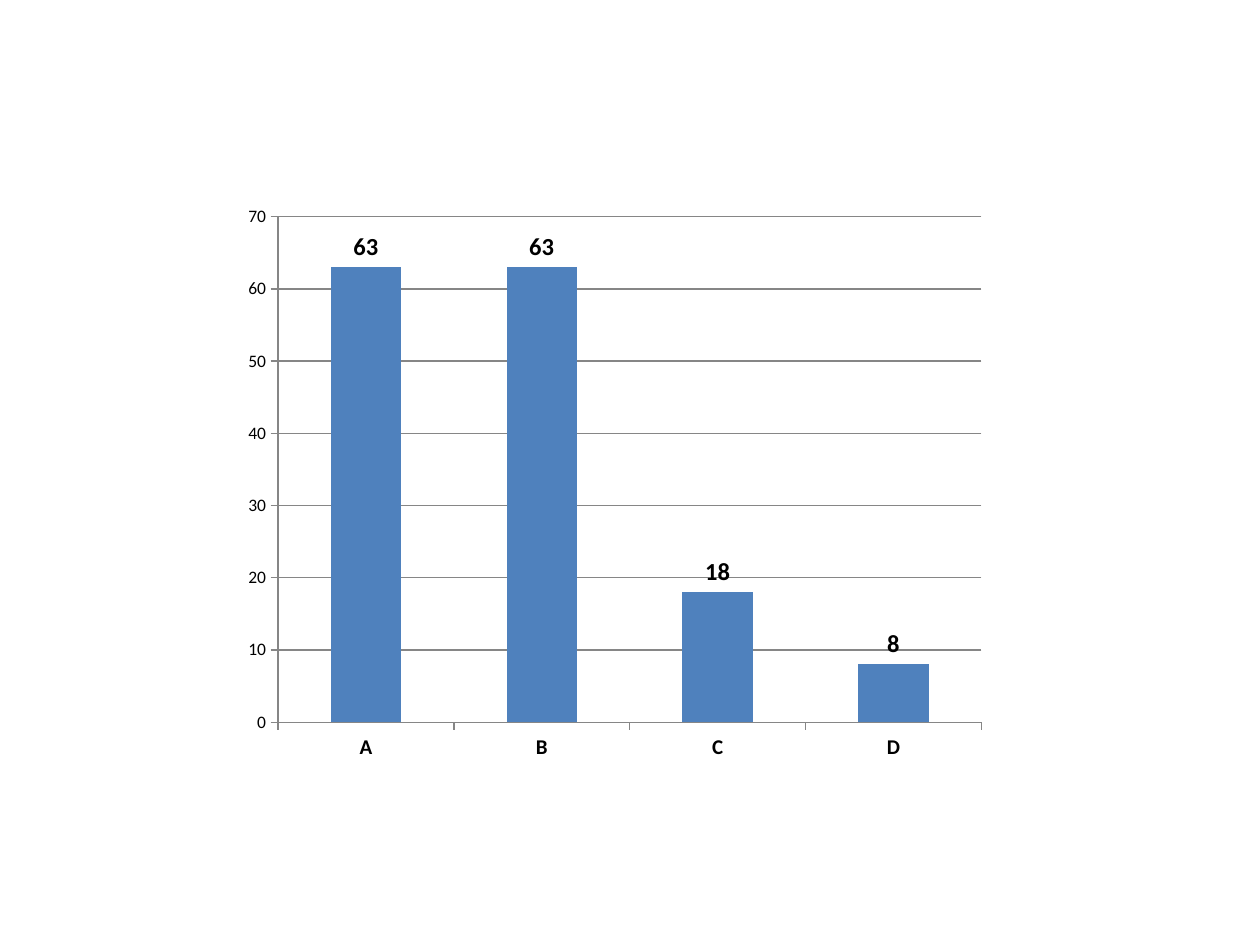
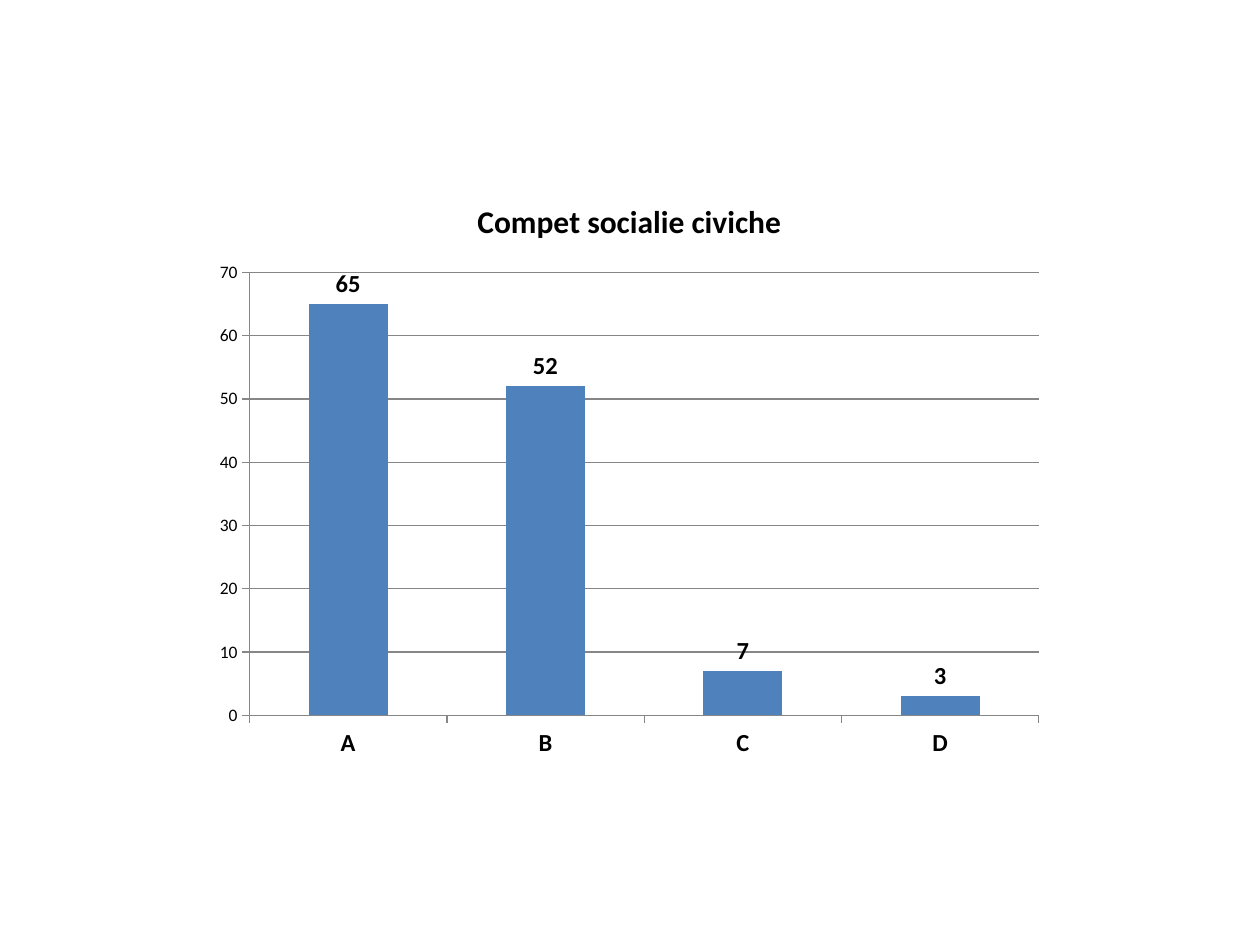
import pptx
import pptx.chart.data
import pptx.dml.color
import pptx.enum.chart
import pptx.util
from pptx.util import Inches

BLACK = pptx.dml.color.RGBColor(0x00, 0x00, 0x00)
BAR_BLUE = pptx.dml.color.RGBColor(0x4F, 0x81, 0xBD)
LINE_GREY = pptx.dml.color.RGBColor(0x86, 0x86, 0x86)
FONT_NAME = "Calibri"
LEVELS = ("A", "B", "C", "D")
BLANK_LAYOUT = 6


def style_font(font, size, bold=False):
    font.name = FONT_NAME
    font.size = pptx.util.Pt(size)
    font.bold = bold
    font.color.rgb = BLACK


def style_line(line):
    line.color.rgb = LINE_GREY
    line.width = pptx.util.Pt(0.75)


def style_axes(chart, category_size):
    category_axis, value_axis = chart.category_axis, chart.value_axis
    for axis in (category_axis, value_axis):
        axis.major_tick_mark = pptx.enum.chart.XL_TICK_MARK.OUTSIDE
        axis.minor_tick_mark = pptx.enum.chart.XL_TICK_MARK.NONE
        style_line(axis.format.line)
    style_font(category_axis.tick_labels.font, category_size, bold=True)
    style_font(value_axis.tick_labels.font, 10)
    value_axis.minimum_scale = 0
    value_axis.maximum_scale = 70
    value_axis.major_unit = 10
    value_axis.has_major_gridlines = True
    style_line(value_axis.major_gridlines.format.line)


def style_bars(plot):
    plot.gap_width = 150
    plot.vary_by_categories = False
    fill = plot.series[0].format.fill
    fill.solid()
    fill.fore_color.rgb = BAR_BLUE
    plot.has_data_labels = True
    labels = plot.data_labels
    labels.show_value = True
    labels.position = pptx.enum.chart.XL_LABEL_POSITION.OUTSIDE_END
    style_font(labels.font, 14, bold=True)


def add_level_chart_slide(presentation, box, values, category_size, title=None):
    """Add a slide with one column chart of the counts per level."""
    slide = presentation.slides.add_slide(presentation.slide_layouts[BLANK_LAYOUT])
    chart_data = pptx.chart.data.CategoryChartData()
    chart_data.categories = LEVELS
    chart_data.add_series(title or "Series 1", values)
    chart = slide.shapes.add_chart(
        pptx.enum.chart.XL_CHART_TYPE.COLUMN_CLUSTERED,
        *map(Inches, box), chart_data).chart
    style_font(chart.font, 10)
    chart.has_legend = False
    chart.has_title = title is not None
    if title:
        paragraph = chart.chart_title.text_frame.paragraphs[0]
        paragraph.text = title
        style_font(paragraph.runs[0].font, 18, bold=True)
        chart.chart_title.include_in_layout = False
    style_axes(chart, category_size)
    style_bars(chart.plots[0])


def main():
    presentation = pptx.Presentation()
    presentation.slide_width = Inches(10)
    presentation.slide_height = Inches(7.5)
    add_level_chart_slide(presentation, (1.85, 1.55, 6.06, 4.57),
                          (63, 63, 18, 8), category_size=12)
    add_level_chart_slide(presentation, (1.61, 1.39, 6.77, 4.72),
                          (65, 52, 7, 3), category_size=14,
                          title="Compet socialie civiche")
    presentation.save("out.pptx")


if __name__ == "__main__":
    main()
